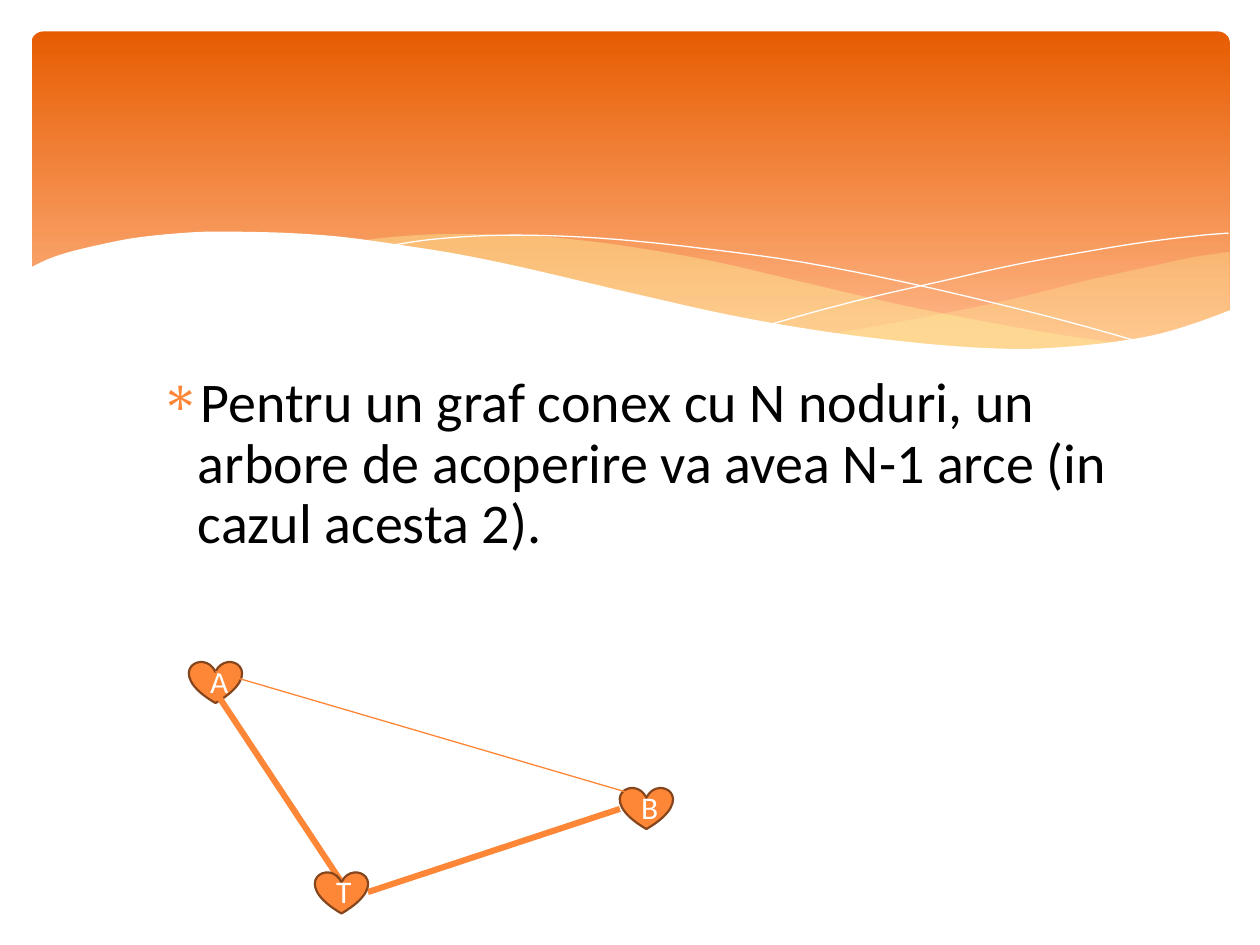
from lxml import etree
from pptx import Presentation
from pptx import util as u
from pptx.dml.color import RGBColor
from pptx.enum import shapes, text
from pptx.oxml.ns import qn

ORANGE, BROWN, WHITE, BLACK, CREAM = "FE8637", "85461D", "FFFFFF", "000000", "FFF39D"
FONT = "Calibri"
BODY = ("Pentru un graf conex cu N noduri, un arbore de acoperire "
        "va avea N-1 arce (in cazul acesta 2).")

# Graph: node corners, then edges as (from, to, width in points)
NODE_SIZE = (0.42, 0.33)
NODES_BELOW = [("B", 4.92, 6.25), ("A", 1.5, 5.25)]
EDGES = [((1.71, 5.33), (5.12, 6.33), 0.75),
         ((2.92, 7.08), (4.92, 6.42), 3.5),
         ((1.71, 5.49), (2.71, 7), 3.5)]
NODES_ABOVE = [("T", 2.5, 6.92)]

# Banner waves: each edge is a smooth curve through its key points
RIGHT_WAVE = [
    [(9.76, 2), (9.48, 2.04), (9.06, 2.13), (8.61, 2.23), (8.05, 2.37),
     (7.53, 2.48), (7.06, 2.57), (6.61, 2.65)],
    [(6.61, 2.65), (7.05, 2.71), (7.57, 2.76), (8.03, 2.78), (8.44, 2.77),
     (8.81, 2.73), (9.21, 2.65), (9.49, 2.57), (9.76, 2.47)]]
MIDDLE_WAVE = [
    [(8.93, 2.73), (8.37, 2.65), (7.75, 2.54), (7.06, 2.4), (6.29, 2.22),
     (5.69, 2.08), (5.14, 1.98), (4.64, 1.91), (4.2, 1.87), (3.8, 1.86),
     (3.44, 1.86), (3.13, 1.88), (2.86, 1.91)],
    [(2.86, 1.91), (3.42, 1.99), (4.04, 2.11), (4.49, 2.22), (5.3, 2.4),
     (6.01, 2.55), (6.65, 2.66), (7.22, 2.74), (7.73, 2.78), (8.18, 2.79),
     (8.57, 2.77), (8.93, 2.73)]]
FALLING_LINE = [[(3.09, 1.95), (3.43, 1.9), (3.87, 1.87), (4.33, 1.87), (4.89, 1.9),
                 (5.56, 1.97), (6.36, 2.08), (7.27, 2.26), (8.31, 2.51), (9.07, 2.72)]]
RISING_LINE = [[(6.13, 2.57), (6.52, 2.46), (6.95, 2.35), (7.48, 2.23), (8.06, 2.1),
                (8.66, 1.99), (9.1, 1.92), (9.51, 1.87), (9.75, 1.85)]]
WHITE_WAVE = [
    [(9.77, 2.46), (9.5, 2.56), (9.2, 2.65), (8.87, 2.71), (8.5, 2.75),
     (8.09, 2.77), (7.61, 2.75), (7.08, 2.7), (6.47, 2.62), (5.79, 2.5),
     (5.03, 2.33), (4.18, 2.13), (3.65, 2.02), (3.15, 1.94), (2.71, 1.88),
     (2.3, 1.85), (1.93, 1.84), (1.61, 1.84), (1.32, 1.86), (1.06, 1.89),
     (0.85, 1.93), (0.59, 1.99), (0.4, 2.05), (0.23, 2.13)],
    [(0.23, 3.29), (9.77, 3.29)]]


def color(value):
    return RGBColor.from_string(value)


def inches(*values):
    return [u.Inches(value) for value in values]


def smooth(points, steps=5):
    """Return points on a Catmull-Rom curve through the key points."""
    if len(points) < 3:
        return points
    padded = [points[0], *points, points[-1]]
    curve = [points[0]]
    for a, b, c, d in zip(padded, padded[1:], padded[2:], padded[3:]):
        for step in range(1, steps + 1):
            t = step / steps
            curve.append(tuple(
                0.5 * (2 * q + (r - p) * t + (2 * p - 5 * q + 4 * r - s) * t ** 2
                       + (3 * q - p - 3 * r + s) * t ** 3)
                for p, q, r, s in zip(a, b, c, d)))
    return curve


def style(shape, fill=None, line=None, width=0, alpha=None):
    shape.shadow.inherit = False
    if fill:
        shape.fill.solid()
        shape.fill.fore_color.rgb = color(fill)
    else:
        shape.fill.background()
    if alpha:
        fill_color = shape.element.spPr.find(qn("a:solidFill"))[0]
        etree.SubElement(fill_color, qn("a:alpha"), val=str(alpha * 1000))
    if line:
        shape.line.color.rgb = color(line)
        shape.line.width = u.Pt(width)
    else:
        shape.line.fill.background()


def write(shape, words, size, fill, align=None):
    paragraph = shape.text_frame.paragraphs[0]
    paragraph.alignment = align
    run = paragraph.add_run()
    run.text = words
    run.font.name, run.font.size = FONT, u.Pt(size)
    run.font.color.rgb = color(fill)
    return paragraph


def add_wave(slide, edges, closed=True, **look):
    points = [inches(*point) for edge in edges for point in smooth(edge)]
    builder = slide.shapes.build_freeform(*points[0])
    builder.add_line_segments(points[1:], close=closed)
    style(builder.convert_to_shape(), **look)


def add_banner(slide):
    panel = slide.shapes.add_shape(shapes.MSO_SHAPE.ROUNDED_RECTANGLE,
                                   *inches(0.25, 0.25, 9.51, 2.7))
    panel.adjustments[0] = 0.034
    style(panel)
    panel.fill.gradient()
    panel.fill.gradient_angle = 270
    for stop, place, value in zip(panel.fill.gradient_stops, (0, 0.9), ("E75C01", "FEB687")):
        stop.position, stop.color.rgb = place, color(value)
    add_wave(slide, RIGHT_WAVE, fill=CREAM, alpha=29)
    add_wave(slide, MIDDLE_WAVE, fill=CREAM, alpha=40)
    for line in (FALLING_LINE, RISING_LINE):
        add_wave(slide, line, closed=False, line=WHITE)
    add_wave(slide, WHITE_WAVE, fill=WHITE)


def add_bullet(paragraph, mark, fill, indent):
    properties = paragraph._p.get_or_add_pPr()
    properties.set("marL", str(u.Inches(indent)))
    properties.set("indent", str(-u.Inches(indent)))
    bullet_color = etree.SubElement(properties, qn("a:buClr"))
    etree.SubElement(bullet_color, qn("a:srgbClr"), val=fill)
    etree.SubElement(properties, qn("a:buFont"), typeface="Symbol")
    etree.SubElement(properties, qn("a:buChar"), char=mark)


def fill_body(slide):
    body = slide.placeholders[1]
    body.left, body.top, body.width, body.height = inches(1.17, 2.92, 8.33, 3.61)
    body.text_frame.auto_size = text.MSO_AUTO_SIZE.NONE
    paragraph = write(body, BODY, 32, BLACK)
    paragraph.line_spacing = 0.9
    paragraph.space_before = u.Pt(6.4)
    add_bullet(paragraph, "∗", ORANGE, 0.3)
    # Bring the text in front of the banner
    slide.shapes._spTree.append(body.element)


def add_nodes(slide, nodes):
    for name, left, top in nodes:
        heart = slide.shapes.add_shape(shapes.MSO_SHAPE.HEART,
                                       *inches(left, top, *NODE_SIZE))
        style(heart, fill=ORANGE, line=BROWN, width=1.25)
        heart.text_frame.vertical_anchor = text.MSO_ANCHOR.MIDDLE
        write(heart, name, 18, WHITE, align=text.PP_ALIGN.CENTER)


def add_edges(slide):
    for start, end, width in EDGES:
        edge = slide.shapes.add_connector(shapes.MSO_CONNECTOR.STRAIGHT,
                                          *inches(*start, *end))
        edge.line.color.rgb = color(ORANGE)
        edge.line.width = u.Pt(width)
        etree.SubElement(edge.element.spPr, qn("a:effectLst"))


def main():
    presentation = Presentation()
    presentation.slide_width, presentation.slide_height = inches(10, 7.5)
    slide = presentation.slides.add_slide(presentation.slide_layouts[1])
    title = slide.shapes.title.element
    title.getparent().remove(title)
    add_banner(slide)
    fill_body(slide)
    add_nodes(slide, NODES_BELOW)
    add_edges(slide)
    add_nodes(slide, NODES_ABOVE)
    presentation.save("out.pptx")


if __name__ == "__main__":
    main()
